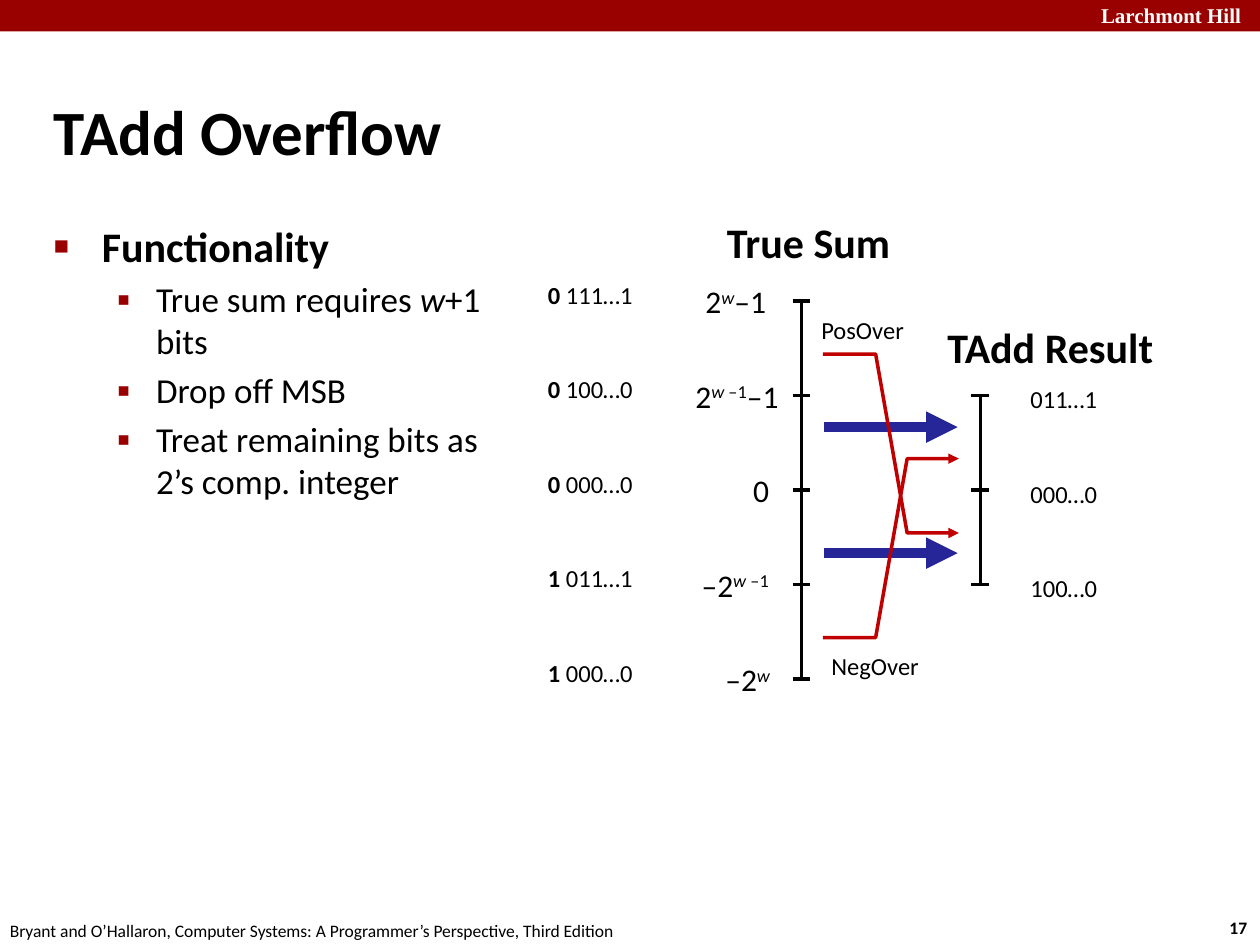
from lxml import etree
from pptx import Presentation
from pptx.dml.color import RGBColor as RGB
from pptx.enum.shapes import MSO_CONNECTOR as Conn, MSO_SHAPE as Shape
from pptx.enum.text import MSO_ANCHOR as Anchor, PP_ALIGN as Align
from pptx.oxml.ns import qn
from pptx.util import Inches, Pt

BLACK = RGB(0x00, 0x00, 0x00)
WHITE = RGB(0xFF, 0xFF, 0xFF)
RED = RGB(0x99, 0x00, 0x00)
BLUE = RGB(0x26, 0x26, 0x99)
CRIMSON = RGB(0xC0, 0x00, 0x00)

STEP = 0.75  # gap between two ticks


def write(para, runs, size, face="Calibri", color=BLACK):
    """Fill a paragraph from (text, marks) pairs; marks: b, i, ^ (raised)."""
    for text, marks in runs:
        run = para.add_run()
        run.text = text
        form = {"name": face, "size": Pt(size), "bold": "b" in marks,
                "italic": "i" in marks}
        for key, val in form.items():
            setattr(run.font, key, val)
        run.font.color.rgb = color
        if "^" in marks:
            run.font._element.set("baseline", "30000")


def label(slide, box, runs, size, wrap=False, align=Align.LEFT, **font):
    frame = slide.shapes.add_textbox(*map(Inches, box)).text_frame
    frame.word_wrap = wrap
    para = frame.paragraphs[0]
    para.alignment = align
    write(para, runs, size, **font)
    return frame


def indent(para, left, hang):
    props = para._p.get_or_add_pPr()
    props.set("marL", str(Inches(left)))
    props.set("indent", str(-Inches(hang)))
    return props


def bullet(para, char, left, hang, scale):
    props = indent(para, left, hang)
    tint = etree.SubElement(props, qn("a:buClr"))
    etree.SubElement(tint, qn("a:srgbClr"), val=str(RED))
    etree.SubElement(props, qn("a:buSzPct"), val=str(scale * 1000))
    etree.SubElement(props, qn("a:buFont"), typeface="Arial")
    etree.SubElement(props, qn("a:buChar"), char=char)


def stroke(shape, color, width, arrow=False):
    shape.line.color.rgb = color
    shape.line.width = Pt(width)
    if arrow:
        etree.SubElement(shape.line._get_or_add_ln(), qn("a:tailEnd"),
                         type="triangle")


def line(slide, x1, y1, x2, y2, color=BLACK, width=2, arrow=False):
    link = slide.shapes.add_connector(Conn.STRAIGHT,
                                      *map(Inches, (x1, y1, x2, y2)))
    stroke(link, color, width, arrow)
    etree.SubElement(link._element.spPr, qn("a:effectLst"))


def bent(slide, points):
    start, *rest = [tuple(map(Inches, pt)) for pt in points]
    build = slide.shapes.build_freeform(*start, scale=1.0)
    build.add_line_segments(rest, close=False)
    shape = build.convert_to_shape()
    shape.shadow.inherit = False
    shape.fill.background()
    stroke(shape, CRIMSON, 2, arrow=True)


def axis(slide, x, top, count):
    """Upright scale with evenly spaced ticks."""
    line(slide, x, top, x, top + STEP * (count - 1))
    for n in range(count):
        y = top + STEP * n
        line(slide, x - 0.07, y, x + 0.07, y)


def frame(slide, wide, high):
    # Top band, source line and page number
    band = slide.shapes.add_shape(Shape.RECTANGLE, 0, 0, Inches(wide),
                                  Inches(0.25))
    band.shadow.inherit = False
    band.fill.solid()
    band.fill.fore_color.rgb = RED
    band.line.fill.background()
    label(slide, (wide - 1.36, -0.03, 1.43, 0.3), [("Larchmont Hill", "b")],
          12, wrap=True, face="Times New Roman", color=WHITE)
    label(slide, (wide - 0.34, high - 0.27, 0.37, 0.27), [("17", "b")], 10)
    label(slide, (-0.02, high - 0.25, 5.08, 0.27),
          [("Bryant and O’Hallaron, Computer Systems: "
            "A Programmer’s Perspective, Third Edition", "")], 10)


def title(slide, box):
    text = label(slide, box, [("TAdd Overflow", "b")], 36, wrap=True)
    text.vertical_anchor = Anchor.MIDDLE
    indent(text.paragraphs[0], 0.13, 0.13)


def points(slide, box):
    # Bulleted list
    text = label(slide, box, [("Functionality", "b")], 24, wrap=True)
    head = text.paragraphs[0]
    head.space_before = Pt(4.8)
    bullet(head, "■", 0.38, 0.38, 60)
    items = [
        [("True sum requires ", ""), ("w", "i"), ("+1 bits", "")],
        [("Drop off MSB", "")],
        [("Treat remaining bits as 2’s comp. integer", "")],
    ]
    for runs in items:
        para = text.add_paragraph()
        para.level = 1
        para.space_before = Pt(4)
        write(para, runs, 20)
        bullet(para, "▪", 0.81, 0.31, 110)


def diagram(slide, left, top):
    # Both scales share the middle tick
    first = top + 0.72
    mid = first + 2 * STEP
    sum_x, res_x = left + 2.11, left + 3.53
    axis(slide, sum_x, first, 5)
    axis(slide, res_x, first + STEP, 3)

    # In-range sums pass straight, overflows cross over
    for shift, far, near in ((-0.5, -1.08, 0.34), (0.5, 1.17, -0.25)):
        y = mid + shift
        line(slide, sum_x + 0.18, y, sum_x + 1.24, y, BLUE, 6, True)
        bent(slide, [(sum_x + 0.17, mid + far), (sum_x + 0.59, mid + far),
                     (sum_x + 0.84, mid + near), (sum_x + 1.25, mid + near)])

    # Headings
    label(slide, (left + 1.42, top, 1.51, 0.5), [("True Sum", "b")], 24)
    label(slide, (left + 3.17, top + 0.83, 1.85, 0.5),
          [("TAdd Result", "b")], 24)

    # True sum rows: carry bit, other bits, value, value box x and width
    rows = [
        ("0", "111…1", [("2", ""), ("w", "i^"), ("–1", "")], 1.25, 0.7),
        ("0", "100…0", [("2", ""), ("w ", "i^"), ("–1", "^"), ("–1", "")],
         1.17, 0.86),
        ("0", "000…0", [("0", "")], 1.63, 0.33),
        ("1", "011…1", [("–2", ""), ("w ", "i^"), ("–1", "^")], 1.17, 0.78),
        ("1", "000…0", [("–2", ""), ("w", "i^")], 1.38, 0.58),
    ]
    for n, (carry, bits, value, x, wide) in enumerate(rows):
        y = first + STEP * n
        label(slide, (left, y - 0.22, 0.88, 0.33),
              [(carry, "b"), (" " + bits, "")], 14)
        label(slide, (left + x, y - 0.2, wide, 0.4), value, 18,
              align=Align.RIGHT if n > 2 else Align.LEFT)

    # Result codes
    for n, bits in enumerate(("011…1", "000…0", "100…0"), 1):
        label(slide, (left + 3.83, first + STEP * n - 0.14, 0.73, 0.33),
              [(bits, "")], 14)

    # Overflow names
    label(slide, (left + 2.17, top + 0.78, 0.86, 0.34), [("PosOver", "")], 14)
    label(slide, (left + 2.25, top + 3.45, 0.9, 0.34), [("NegOver", "")], 14)


def main():
    deck = Presentation()
    deck.slide_width, deck.slide_height = Inches(10), Inches(7.5)
    slide = deck.slides.add_slide(deck.slide_layouts[6])
    frame(slide, 10, 7.5)
    title(slide, (0.33, 0.73, 7.39, 0.61))
    points(slide, (0.33, 1.7, 3.62, 5.71))
    diagram(slide, 4.25, 1.67)
    deck.save("out.pptx")


if __name__ == "__main__":
    main()
